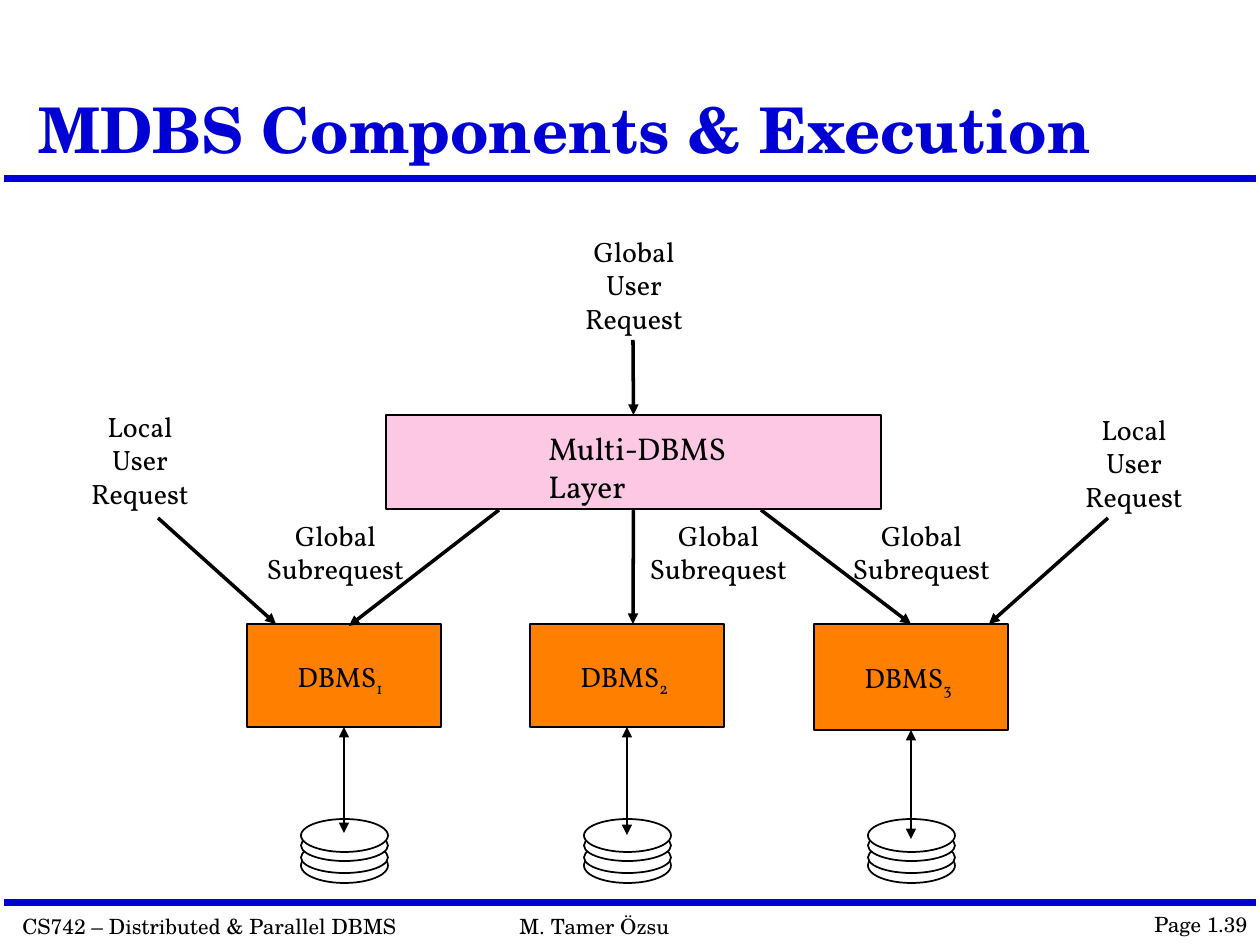
import dataclasses

import pptx
import pptx.dml.color
import pptx.enum.shapes
import pptx.enum.text
import pptx.oxml.ns
import pptx.util
from lxml import etree

EMU_PER_PX = 914400 / 126
SHAPES = pptx.enum.shapes.MSO_SHAPE
ALIGN = pptx.enum.text.PP_ALIGN
ANCHOR = pptx.enum.text.MSO_ANCHOR
AUTO_SIZE = pptx.enum.text.MSO_AUTO_SIZE
TOP, BOTTOM = 0, 2


@dataclasses.dataclass(frozen=True)
class Theme:
    blue: str = "0000D4"
    black: str = "000000"
    white: str = "FFFFFF"
    pink: str = "FDC8E4"
    orange: str = "FF8000"
    heading_font: str = "TeX Gyre Schola"
    body_font: str = "Vollkorn"
    title_size: int = 36
    layer_size: int = 18
    label_size: int = 16
    footer_size: int = 12
    thin: int = 1
    arrow: int = 2
    rule: int = 4


THEME = Theme()


def px(value):
    return pptx.util.Emu(round(value * EMU_PER_PX))


def rgb(value):
    return pptx.dml.color.RGBColor.from_string(value)


def apply_format(target, values):
    for name, value in values.items():
        setattr(target, name, value)


def add_text(slide, box, lines, size, font=THEME.body_font, color=THEME.black,
             bold=False, frame_format=None, paragraph_format=None):
    """Add a text box; each line is one paragraph, given as text or (text, subscript)."""
    shape = slide.shapes.add_textbox(*map(px, box))
    frame = shape.text_frame
    apply_format(frame, {"word_wrap": False, "auto_size": AUTO_SIZE.SHAPE_TO_FIT_TEXT}
                 | (frame_format or {}))
    for index, line in enumerate(lines):
        paragraph = frame.paragraphs[0] if index == 0 else frame.add_paragraph()
        apply_format(paragraph, paragraph_format or {})
        parts = (line,) if isinstance(line, str) else line
        for part_index, part in enumerate(parts):
            run = paragraph.add_run()
            run.text = part
            apply_format(run.font, {"name": font, "size": pptx.util.Pt(size), "bold": bold})
            run.font.color.rgb = rgb(color)
            if part_index == 1:
                run.font._element.set("baseline", "-25000")


def add_label(slide, box, lines):
    add_text(slide, box, lines, THEME.label_size,
             paragraph_format={"alignment": ALIGN.CENTER})


def add_outlined(shapes, kind, box, fill):
    shape = shapes.add_shape(kind, *map(px, box))
    shape.shadow.inherit = False
    shape.fill.solid()
    shape.fill.fore_color.rgb = rgb(fill)
    shape.line.color.rgb = rgb(THEME.black)
    shape.line.width = pptx.util.Pt(THEME.thin)
    return shape


def add_line(slide, points, width, color=THEME.black, ends=(), begin=None, end=None):
    """Add a line; ends names its arrowheads, begin and end are (shape, side) joints."""
    connector = slide.shapes.add_connector(
        pptx.enum.shapes.MSO_CONNECTOR.STRAIGHT, *map(px, points))
    connector.line.color.rgb = rgb(color)
    connector.line.width = pptx.util.Pt(width)
    line = connector.line._get_or_add_ln()
    for name in ends:
        etree.SubElement(line, pptx.oxml.ns.qn("a:" + name), type="triangle")
    etree.SubElement(connector._element.spPr, pptx.oxml.ns.qn("a:effectLst"))
    if begin:
        connector.begin_connect(*begin)
    if end:
        connector.end_connect(*end)


def add_arrow(slide, points, **joints):
    add_line(slide, points, THEME.arrow, ends=("tailEnd",), **joints)


def add_disk_stack(slide, left):
    group = slide.shapes.add_group_shape()
    for top, height in ((848, 35), (842, 31), (830, 31), (819, 33)):
        add_outlined(group.shapes, SHAPES.OVAL, (left, top, 87, height), THEME.white)


def add_database(slide, number, left, height, text_top, arrow_end):
    """Add a numbered DBMS box with its disks and the two-way arrow between them."""
    box = add_outlined(slide.shapes, SHAPES.RECTANGLE, (left, 624, 194, height), THEME.orange)
    add_text(slide, (left + 38, text_top, 118, 47), [("DBMS", str(number))], THEME.label_size)
    add_disk_stack(slide, left + 54)
    center = left + 97
    add_line(slide, (center, 624 + height, center, arrow_end), THEME.thin,
             ends=("headEnd", "tailEnd"), begin=(box, BOTTOM))
    return box


def add_frame(slide):
    """Add the title, the two rules and the footer."""
    for y in (179, 903):
        add_line(slide, (4, y, 1256, y), THEME.rule, THEME.blue)
    for box, text in (((10, 907, 403, 38), "CS742 – Distributed & Parallel DBMS"),
                      ((507, 907, 175, 38), "M. Tamer Özsu"),
                      ((1142, 905, 118, 38), "Page 1.39")):
        add_text(slide, box, [text], THEME.footer_size, THEME.heading_font)
    add_text(slide, (26, 15, 1192, 158), ["MDBS Components & Execution"],
             THEME.title_size, THEME.heading_font, THEME.blue, True,
             {"word_wrap": True, "auto_size": AUTO_SIZE.NONE,
              "vertical_anchor": ANCHOR.BOTTOM},
             {"line_spacing": 0.9})


def main():
    presentation = pptx.Presentation()
    presentation.slide_width, presentation.slide_height = px(1260), px(945)
    slide = presentation.slides.add_slide(presentation.slide_layouts[6])
    add_frame(slide)

    layer = add_outlined(slide.shapes, SHAPES.RECTANGLE, (386, 415, 495, 94), THEME.pink)
    add_text(slide, (536, 423, 208, 89), ["Multi-DBMS", "Layer"], THEME.layer_size)

    databases = [add_database(slide, number, *place) for number, place in enumerate(
        ((247, 103, 653, 833), (530, 103, 653, 835), (814, 106, 654, 839)), start=1)]

    for left, top, scope in ((571, 228, "Global"), (77, 403, "Local"), (1071, 406, "Local")):
        add_label(slide, (left, top, 126, 115), [scope, "User", "Request"])
    for left in (253, 636, 839):
        add_label(slide, (left, 512, 165, 81), ["Global", "Subrequest"])

    add_arrow(slide, (633, 340, 633, 415), end=(layer, TOP))
    add_arrow(slide, (633, 509, 633, 624), begin=(layer, BOTTOM))
    add_arrow(slide, (499, 510, 349, 626))
    add_arrow(slide, (761, 510, 911, 624), end=(databases[2], TOP))
    add_arrow(slide, (158, 518, 276, 624))
    add_arrow(slide, (1108, 518, 989, 624))
    presentation.save("out.pptx")


if __name__ == "__main__":
    main()
